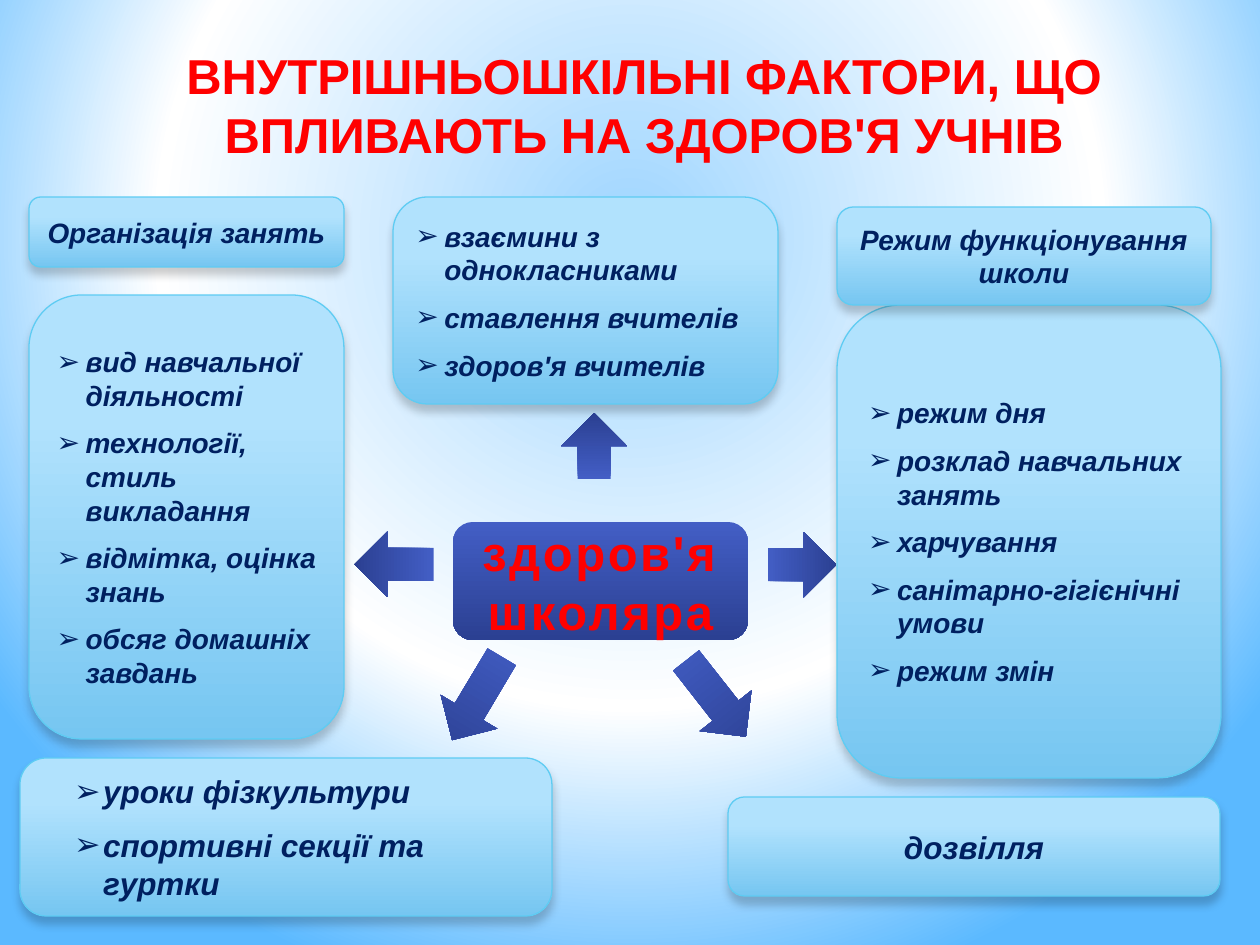
from lxml.etree import SubElement
from pptx import Presentation
from pptx.dml.color import RGBColor
from pptx.enum.shapes import MSO_SHAPE
from pptx.enum.text import MSO_ANCHOR, MSO_AUTO_SIZE, PP_ALIGN
from pptx.oxml import parse_xml
from pptx.oxml.ns import nsdecls, qn
from pptx.util import Pt

EMU_PER_PX = 914400 / 126
COLORS = {
    "title": "FF0000", "text": "002060", "border": "5ECCF3",
    "panel_top": "B1E2FD", "panel_bottom": "76C6F1",
    "core_top": "435EC5", "core_bottom": "2B4092", "shadow": "000000",
    "sky_center": "9ED5FF", "sky_ring": "FFFFFF", "sky_edge": "5BB9FF",
}
PANEL_FILL = (("panel_top", 0.28), ("panel_bottom", 1))
CORE_FILL = (("core_top", 0), ("core_bottom", 1))

TITLE_FONT = {"name": "Arial", "size": Pt(28), "bold": True}
BODY_FONT = {"name": "Arial", "size": Pt(16), "bold": True, "italic": True}
LARGE_FONT = {**BODY_FONT, "size": Pt(18)}

# Bullet lists: box, left indent, font, items
LISTS = [
    ((393, 197, 385, 207), 29, BODY_FONT,
     ["взаємини з однокласниками", "ставлення вчителів", "здоров'я вчителів"]),
    ((29, 295, 315, 444), 29, BODY_FONT,
     ["вид навчальної діяльності", "технології, стиль викладання",
      "відмітка, оцінка знань", "обсяг домашніх завдань"]),
    ((837, 305, 384, 473), 29, BODY_FONT,
     ["режим дня", "розклад навчальних занять", "харчування",
      "санітарно-гігієнічні умови", "режим змін"]),
    ((20, 758, 532, 158), 63, LARGE_FONT,
     ["уроки фізкультури", "спортивні секції та гуртки"]),
]
LABELS = [
    ((29, 197, 315, 70), BODY_FONT, "Організація занять"),
    ((837, 207, 374, 98), BODY_FONT, "Режим функціонування школи"),
    ((728, 797, 492, 99), LARGE_FONT, "дозвілля"),
]
# Arrows around the centre: box before rotation, rotation in degrees
ARROWS = [
    ((444, 650, 66, 97), 30.8),
    ((683, 650, 66, 97), 321.9),
    ((561, 413, 66, 66), 180),
    ((361, 525, 66, 79), 90),
    ((769, 530, 66, 69), 270),
]


def px(length):
    return round(length * EMU_PER_PX)


def rgb(name):
    return RGBColor.from_string(COLORS[name])


def paint_background(slide):
    """Fill the background with a circular three-colour gradient."""
    slide.background.fill.solid()
    solid = slide.background._cSld.bg.bgPr.find(qn("a:solidFill"))
    stops = "".join(
        f'<a:gs pos="{position}"><a:srgbClr val="{COLORS[name]}"/></a:gs>'
        for name, position in (("sky_center", 0), ("sky_ring", 60000), ("sky_edge", 100000)))
    solid.getparent().replace(solid, parse_xml(
        f'<a:gradFill {nsdecls("a")} rotWithShape="1"><a:gsLst>{stops}</a:gsLst>'
        '<a:path path="circle">'
        '<a:fillToRect l="20000" t="10000" r="20000" b="60000"/></a:path></a:gradFill>'))


def add_gradient_shape(slide, preset, box, stops):
    shape = slide.shapes.add_shape(preset, *map(px, box))
    shape.shadow.inherit = False
    shape.line.fill.background()
    shape.fill.gradient()
    shape.fill.gradient_angle = 270
    for stop, (name, position) in zip(shape.fill.gradient_stops, stops):
        stop.color.rgb = rgb(name)
        stop.position = position
    return shape


def add_panel(slide, box):
    """Add a light rounded box with a thin border and a soft shadow below."""
    shape = add_gradient_shape(slide, MSO_SHAPE.ROUNDED_RECTANGLE, box, PANEL_FILL)
    shape.line.color.rgb = rgb("border")
    shape.line.width = Pt(0.75)
    effects = shape._element.spPr.find(qn("a:effectLst"))
    shadow = SubElement(effects, qn("a:outerShdw"), blurRad=str(Pt(5)), dist=str(Pt(4)),
                        dir="5400000", rotWithShape="0")
    color = SubElement(shadow, qn("a:srgbClr"), val=COLORS["shadow"])
    SubElement(color, qn("a:alpha"), val="20000")
    return shape


def write_text(shape, lines, font, color, align=PP_ALIGN.CENTER):
    frame = shape.text_frame
    frame.word_wrap = True
    for index, line in enumerate(lines):
        paragraph = frame.paragraphs[0] if index == 0 else frame.add_paragraph()
        paragraph.alignment = align
        paragraph.space_before = Pt(font["size"].pt / 2)
        run = paragraph.add_run()
        run.text = line
        run.font.color.rgb = rgb(color)
        for attribute, value in font.items():
            setattr(run.font, attribute, value)


def add_bullets(shape, indent):
    for paragraph in shape.text_frame.paragraphs:
        properties = paragraph._p.get_or_add_pPr()
        properties.set("marL", str(px(indent)))
        properties.set("indent", str(px(-29)))
        SubElement(properties, qn("a:buFont"), typeface="Arial")
        SubElement(properties, qn("a:buChar"), char="➢")


def add_title(slide):
    title = slide.shapes.add_textbox(*map(px, (98, 39, 1092, 131)))
    write_text(title, ["ВНУТРІШНЬОШКІЛЬНІ ФАКТОРИ, ЩО ВПЛИВАЮТЬ НА ЗДОРОВ'Я УЧНІВ"],
               TITLE_FONT, "title")
    title.text_frame.auto_size = MSO_AUTO_SIZE.SHAPE_TO_FIT_TEXT


def add_list(slide, box, indent, font, items):
    panel = add_panel(slide, box)
    write_text(panel, items, font, "text", PP_ALIGN.LEFT)
    add_bullets(panel, indent)


def add_label(slide, box, font, text):
    write_text(add_panel(slide, box), [text], font, "text")


def add_core(slide):
    core = add_gradient_shape(slide, MSO_SHAPE.ROUNDED_RECTANGLE, (453, 522, 295, 118), CORE_FILL)
    write_text(core, ["здоров'я школяра"], TITLE_FONT, "title")
    core.text_frame.vertical_anchor = MSO_ANCHOR.MIDDLE
    core.text_frame.paragraphs[0].runs[0].font._element.set("spc", "150")


def add_arrow(slide, box, rotation):
    arrow = add_gradient_shape(slide, MSO_SHAPE.DOWN_ARROW, box, CORE_FILL)
    arrow.rotation = rotation


def main():
    presentation = Presentation()
    presentation.slide_width, presentation.slide_height = px(1260), px(945)
    slide = presentation.slides.add_slide(presentation.slide_layouts[6])
    paint_background(slide)
    add_title(slide)
    for values in LISTS:
        add_list(slide, *values)
    for values in LABELS:
        add_label(slide, *values)
    add_core(slide)
    for values in ARROWS:
        add_arrow(slide, *values)
    presentation.save("out.pptx")


if __name__ == "__main__":
    main()
